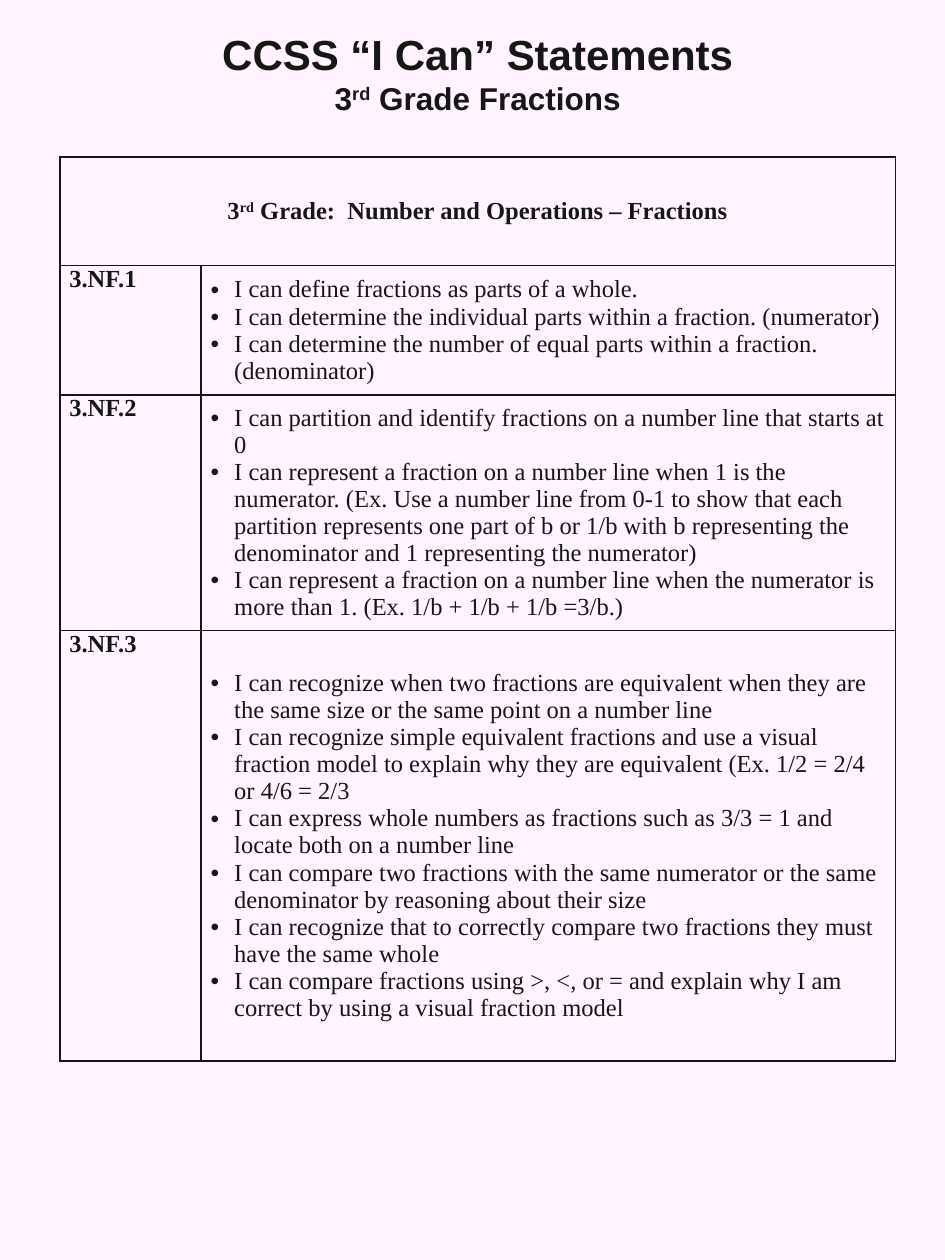
from lxml.etree import SubElement
from pptx import Presentation
from pptx.dml.color import RGBColor as Rgb
from pptx.enum.text import MSO_ANCHOR as Anchor, PP_ALIGN as Align
from pptx.oxml.ns import qn
from pptx.util import Pt

COLORS = {"page": "FFF4FF", "ink": "161616"}
HEADING, BODY = "Arial", "Times New Roman"

# Code, distance of the code from the row's top, row height, statements
STANDARDS = [
    ("3.NF.1", 21.5, 74, [
        "I can define fractions as parts of a whole.",
        "I can determine the individual parts within a fraction. (numerator)",
        "I can determine the number of equal parts within a fraction. (denominator)",
    ]),
    ("3.NF.2", 16.5, 125.25, [
        "I can partition and identify fractions on a number line that starts at 0",
        "I can represent a fraction on a number line when 1 is the numerator. "
        "(Ex. Use a number line from 0-1 to show that each partition represents "
        "one part of b or 1/b with b representing the denominator and 1 "
        "representing the numerator)",
        "I can represent a fraction on a number line when the numerator is more "
        "than 1. (Ex. 1/b + 1/b + 1/b =3/b.)",
    ]),
    ("3.NF.3", 61, 246, [
        "I can recognize when two fractions are equivalent when they are the same "
        "size or the same point on a number line",
        "I can recognize simple equivalent fractions and use a visual fraction "
        "model to explain why they are equivalent (Ex. 1/2 = 2/4 or 4/6 = 2/3",
        "I can express whole numbers as fractions such as 3/3 = 1 and locate both "
        "on a number line",
        "I can compare two fractions with the same numerator or the same "
        "denominator by reasoning about their size",
        "I can recognize that to correctly compare two fractions they must have "
        "the same whole",
        "I can compare fractions using >, <, or = and explain why I am correct by "
        "using a visual fraction model",
    ]),
]


def add_span(para, text, size, font=BODY, bold=True, raised=False):
    span = para.add_run()
    span.text = text
    span.font.size = Pt(size)
    span.font.name = font
    span.font.bold = bold
    span.font.color.rgb = Rgb.from_string(COLORS["ink"])
    if raised:
        span.font._element.set("baseline", "30000")


deck = Presentation()
deck.slide_width, deck.slide_height = Pt(540), Pt(720)
page = deck.slides.add_slide(deck.slide_layouts[6])
page.background.fill.solid()
page.background.fill.fore_color.rgb = Rgb.from_string(COLORS["page"])

# Title
title = page.shapes.add_textbox(Pt(43.25), Pt(27), Pt(459.5), Pt(29)).text_frame
title.word_wrap = True
title.vertical_anchor = Anchor.MIDDLE
para = title.paragraphs[0]
para.alignment = Align.CENTER
add_span(para, "CCSS “I Can” Statements", 24, HEADING)
para.add_line_break()
add_span(para, "3", 18, HEADING)
add_span(para, "rd", 18, HEADING, raised=True)
add_span(para, " Grade Fractions", 18, HEADING)

# Standards table
column_widths = [80.75, 396.75]
row_heights = [62] + [height for _, _, height, _ in STANDARDS]
table = page.shapes.add_table(
    len(row_heights), 2, Pt(34.25), Pt(89.75), Pt(sum(column_widths)), Pt(sum(row_heights))
).table
table.first_row = table.horz_banding = False
for column, width in zip(table.columns, column_widths):
    column.width = Pt(width)
for row, height in zip(table.rows, row_heights):
    row.height = Pt(height)

for cell in table.iter_cells():
    cell.margin_left = cell.margin_right = Pt(5.4)
    cell.margin_top = cell.margin_bottom = 0
    cell.vertical_anchor = Anchor.MIDDLE
    for side in "LRTB":
        line = SubElement(cell._tc.get_or_add_tcPr(), qn(f"a:ln{side}"), w=str(Pt(1)))
        fill = SubElement(line, qn("a:solidFill"))
        SubElement(fill, qn("a:srgbClr"), val=COLORS["ink"])
    cell.fill.background()

header = table.cell(0, 0)
header.merge(table.cell(0, 1))
para = header.text_frame.paragraphs[0]
para.alignment = Align.CENTER
add_span(para, "3", 14)
add_span(para, "rd", 14, raised=True)
add_span(para, " Grade:  Number and Operations – Fractions", 14)

for row_index, (code, offset, _, statements) in enumerate(STANDARDS, start=1):
    code_cell = table.cell(row_index, 0)
    code_cell.vertical_anchor = Anchor.TOP
    para = code_cell.text_frame.paragraphs[0]
    para.space_before = Pt(offset)
    add_span(para, code, 14)

    frame = table.cell(row_index, 1).text_frame
    for index, statement in enumerate(statements):
        para = frame.add_paragraph() if index else frame.paragraphs[0]
        settings = para._p.get_or_add_pPr()
        settings.set("marL", str(Pt(13.5)))
        settings.set("indent", str(Pt(-13.5)))
        SubElement(settings, qn("a:buFont"), typeface="Arial")
        SubElement(settings, qn("a:buChar"), char="•")
        add_span(para, statement, 14, bold=False)

deck.save("out.pptx")
